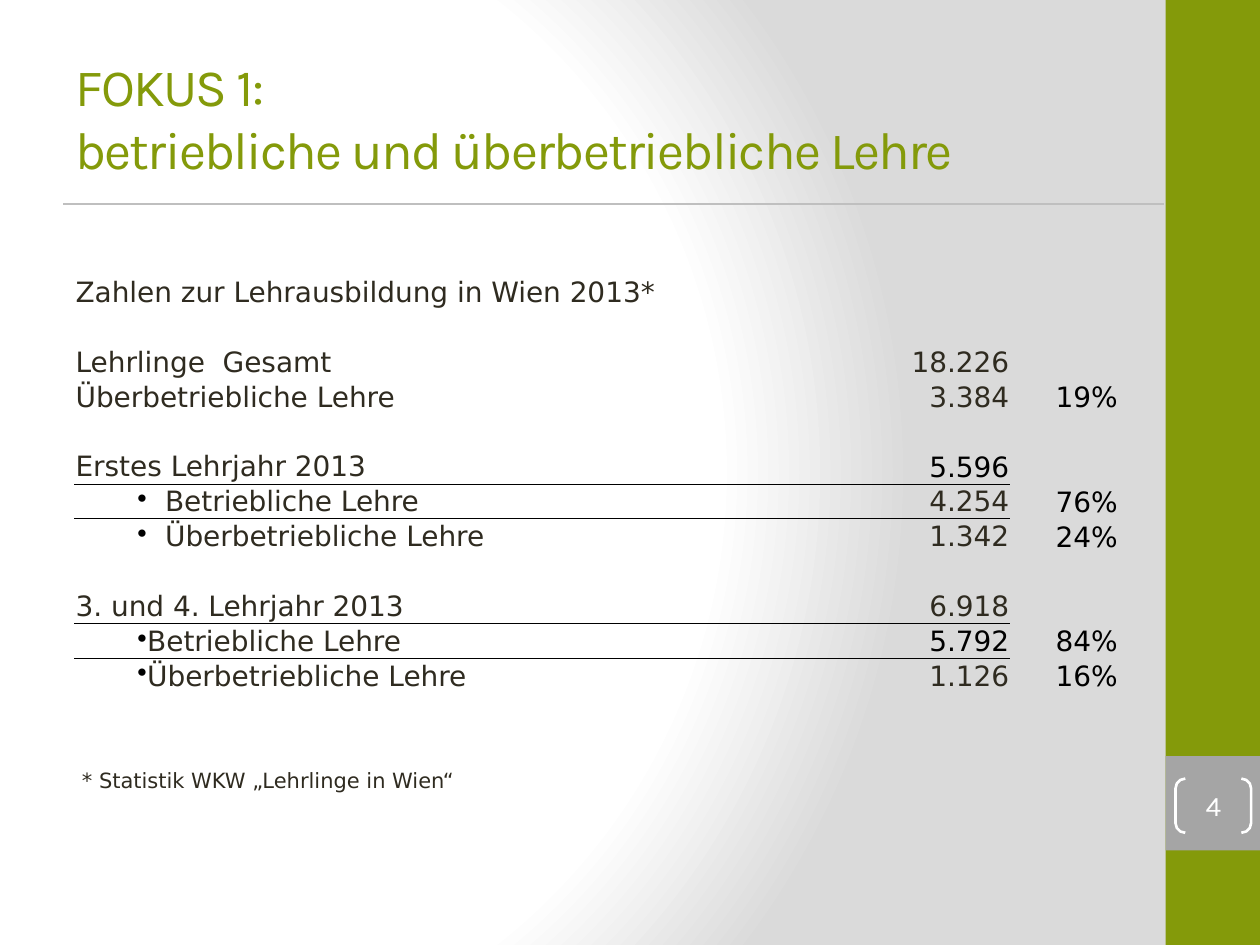
from lxml.etree import SubElement
from pptx import Presentation
from pptx.dml.color import RGBColor
from pptx.enum.shapes import MSO_CONNECTOR, MSO_SHAPE
from pptx.enum.text import MSO_ANCHOR as Anchor, PP_ALIGN as Align
from pptx.oxml import parse_xml
from pptx.oxml.ns import nsdecls, qn
from pptx.util import Inches, Pt

# Content: label, number, share, kind of row
TITLE = ["FOKUS 1:", "betriebliche und überbetriebliche Lehre"]
PAGE = "4"
EMPTY = ("", "", "", "plain")
ROWS = [
    ("Zahlen zur Lehrausbildung in Wien 2013*", "", "", "plain"),
    EMPTY,
    ("Lehrlinge  Gesamt", "18.226", "", "plain"),
    ("Überbetriebliche Lehre", "3.384", "19%", "plain"),
    EMPTY,
    ("Erstes Lehrjahr 2013", "5.596", "", "heading"),
    ("Betriebliche Lehre", "4.254", "76%", "spaced bullet"),
    ("Überbetriebliche Lehre", "1.342", "24%", "spaced bullet"),
    EMPTY,
    ("3. und 4. Lehrjahr 2013", "6.918", "", "heading"),
    ("Betriebliche Lehre", "5.792", "84%", "tight bullet"),
    ("Überbetriebliche Lehre", "1.126", "16%", "tight bullet"),
    EMPTY,
    EMPTY,
    ("* Statistik WKW „Lehrlinge in Wien“", "", "", "footnote"),
]
BLACK_NUMBERS = {"5.596", "5.792"}

GREEN = RGBColor(0x84, 0x9A, 0x0A)
GREY = RGBColor(0xA5, 0xA5, 0xA5)
RULE = RGBColor(0xBF, 0xBF, 0xBF)
WHITE = RGBColor(0xFF, 0xFF, 0xFF)
BLACK = RGBColor(0, 0, 0)
INK = RGBColor(0x2F, 0x2B, 0x20)
TITLE_FONT, TABLE_FONT = "Karla", "DejaVu Sans"

# Layout in inches
WIDTH, HEIGHT = 10, 7.5
BAND = 0.75
BAND_LEFT = WIDTH - BAND
MARGIN = 0.5
COLUMNS = [6.17, 1.26, 0.86]
TABLE_LEFT, TABLE_TOP, TABLE_HEIGHT = 0.59, 2.18, 4.12
LEFT_INSET = {"spaced bullet": 0.5, "tight bullet": 0.5, "footnote": 0.06}
BULLET_GAP = {"spaced bullet": 0.22, "tight bullet": 0}
NO_STYLE = "{2D5ABB26-0587-4C30-8999-92F81FD0307C}"


def add_text(paragraph, text, font, size, color):
    run = paragraph.add_run()
    run.text = text
    run.font.name, run.font.size = font, Pt(size)
    run.font.color.rgb = color
    return run


def add_block(slide, shape_type, box, fill=None):
    block = slide.shapes.add_shape(shape_type, *map(Inches, box))
    block.shadow.inherit = False
    block.line.fill.background()
    if fill is None:
        block.fill.background()
    else:
        block.fill.solid()
        block.fill.fore_color.rgb = fill
    return block


def set_background(slide):
    stops = "".join(
        f'<a:gs pos="{share * 1000}"><a:srgbClr val="{color}"/></a:gs>'
        for share, color in [(0, "FFFFFF"), (75, "FFFFFF"), (100, "DADADA")])
    background = parse_xml(
        f'<p:bg {nsdecls("p", "a")}><p:bgPr><a:gradFill rotWithShape="1">'
        f'<a:gsLst>{stops}</a:gsLst><a:path path="circle">'
        '<a:fillToRect l="20000" t="50000" r="100000" b="50000"/></a:path>'
        '</a:gradFill><a:effectLst/></p:bgPr></p:bg>')
    slide.element.cSld.insert(0, background)


def add_bullet(paragraph, gap):
    props = paragraph._p.get_or_add_pPr()
    props.set("marL", str(Inches(gap)))
    props.set("indent", str(-Inches(gap)))
    color = SubElement(props, qn("a:buClr"))
    SubElement(color, qn("a:srgbClr"), val=str(BLACK))
    SubElement(props, qn("a:buChar"), char="•")


def add_border(cell, side):
    cell._tc.get_or_add_tcPr().insert(0, parse_xml(
        f'<a:{side} {nsdecls("a")} w="{Pt(0.5)}"><a:solidFill>'
        f'<a:srgbClr val="{BLACK}"/></a:solidFill></a:{side}>'))


def fill_cell(cell, column, text, kind):
    black = column == 2 or text in BLACK_NUMBERS
    size = 12 if kind == "footnote" else 16
    cell.fill.background()
    cell.margin_left = Inches(LEFT_INSET.get(kind, 0.01) if column == 0 else 0.01)
    cell.margin_right = cell.margin_top = Inches(0.01)
    cell.margin_bottom = 0
    cell.vertical_anchor = Anchor.BOTTOM if black else Anchor.MIDDLE
    paragraph = cell.text_frame.paragraphs[0]
    if not text:
        # Keeps empty cells from stretching their row
        SubElement(paragraph._p, qn("a:endParaRPr"), sz=str(size * 100))
        return
    if column:
        paragraph.alignment = Align.RIGHT
    elif kind in BULLET_GAP:
        add_bullet(paragraph, BULLET_GAP[kind])
    add_text(paragraph, text, TABLE_FONT, size, BLACK if black else INK)


def add_figures(slide):
    frame = slide.shapes.add_table(
        len(ROWS), len(COLUMNS), Inches(TABLE_LEFT), Inches(TABLE_TOP),
        Inches(sum(COLUMNS)), Inches(TABLE_HEIGHT))
    table = frame.table
    table.first_row = table.horz_banding = False
    table._tbl.tblPr.find(qn("a:tableStyleId")).text = NO_STYLE
    for column, width in zip(table.columns, COLUMNS):
        column.width = Inches(width)
    for r, (*texts, kind) in enumerate(ROWS):
        table.rows[r].height = Inches(TABLE_HEIGHT / len(ROWS))
        for c, text in enumerate(texts):
            fill_cell(table.cell(r, c), c, text, kind)
    # Rule under each heading, below label and number
    for r, row in enumerate(ROWS):
        if row[-1] == "heading":
            for c in (0, 1):
                add_border(table.cell(r, c), "lnB")
                add_border(table.cell(r + 1, c), "lnT")


def main():
    prs = Presentation()
    prs.slide_width, prs.slide_height = Inches(WIDTH), Inches(HEIGHT)
    slide = prs.slides.add_slide(prs.slide_layouts[6])
    set_background(slide)

    # Side band with page number field
    add_block(slide, MSO_SHAPE.RECTANGLE, (BAND_LEFT, 0, BAND, HEIGHT), GREEN)
    add_block(slide, MSO_SHAPE.RECTANGLE, (BAND_LEFT, HEIGHT * 0.8, BAND, BAND), GREY)

    # Rule below the title
    rule = slide.shapes.add_connector(
        MSO_CONNECTOR.STRAIGHT, Inches(MARGIN), Inches(1.62), Inches(9.24), Inches(1.62))
    rule.line.color.rgb, rule.line.width = RULE, Pt(1.25)
    SubElement(rule._element.spPr, qn("a:effectLst"))

    # Page number in brackets
    brackets = add_block(slide, MSO_SHAPE.DOUBLE_BRACKET, (9.33, 6.18, 0.6, 0.43))
    brackets.adjustments[0] = 0.18
    brackets.line.color.rgb, brackets.line.width = WHITE, Pt(1.5)
    number = brackets.text_frame
    number.margin_left = number.margin_right = number.margin_top = number.margin_bottom = 0
    number.vertical_anchor = Anchor.MIDDLE
    number.paragraphs[0].alignment = Align.CENTER
    add_text(number.paragraphs[0], PAGE, TITLE_FONT, 16, WHITE)

    # Title
    title = slide.shapes.add_textbox(*map(Inches, (MARGIN, 0.3, 8.33, 1.25))).text_frame
    title.word_wrap = True
    title.vertical_anchor = Anchor.MIDDLE
    for i, line in enumerate(TITLE):
        if i:
            title.paragraphs[0].add_line_break()
        run = add_text(title.paragraphs[0], line, TITLE_FONT, 30, GREEN)
        run.font._element.set("spc", "-100")

    add_figures(slide)
    prs.save("out.pptx")


if __name__ == "__main__":
    main()
